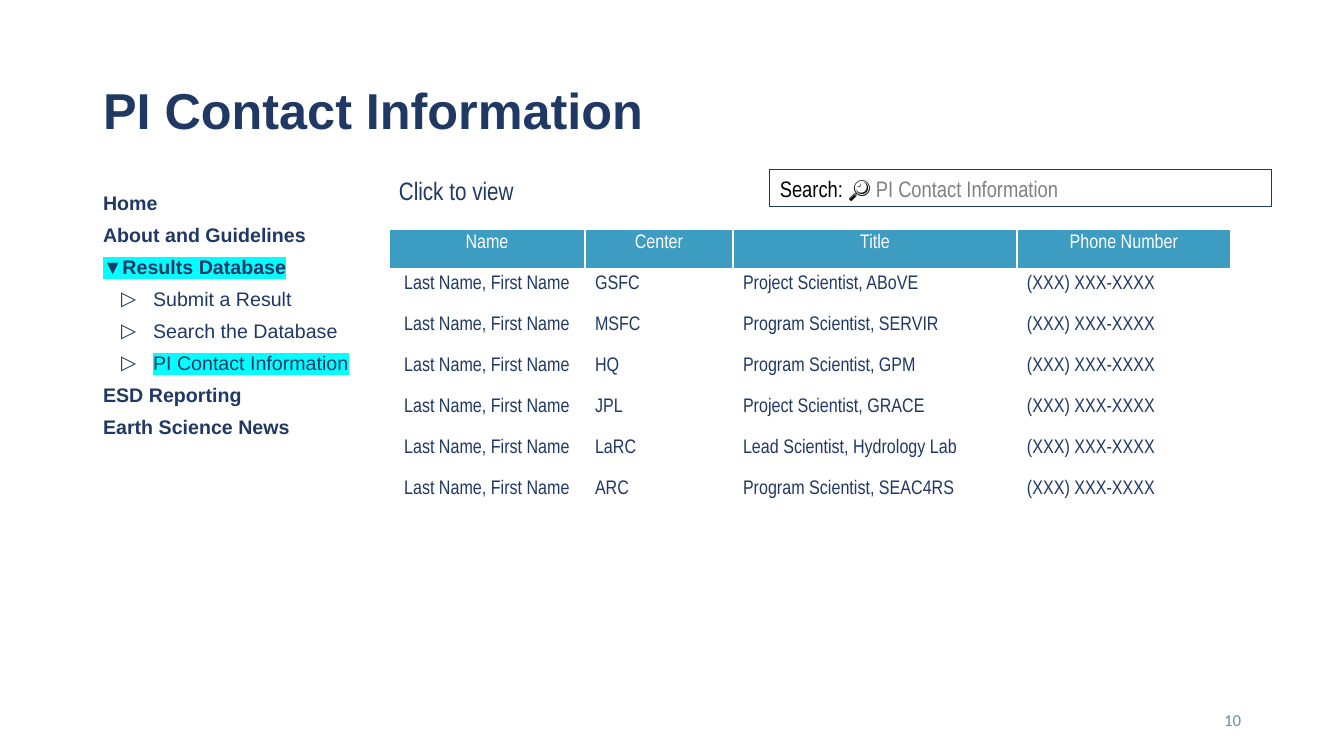
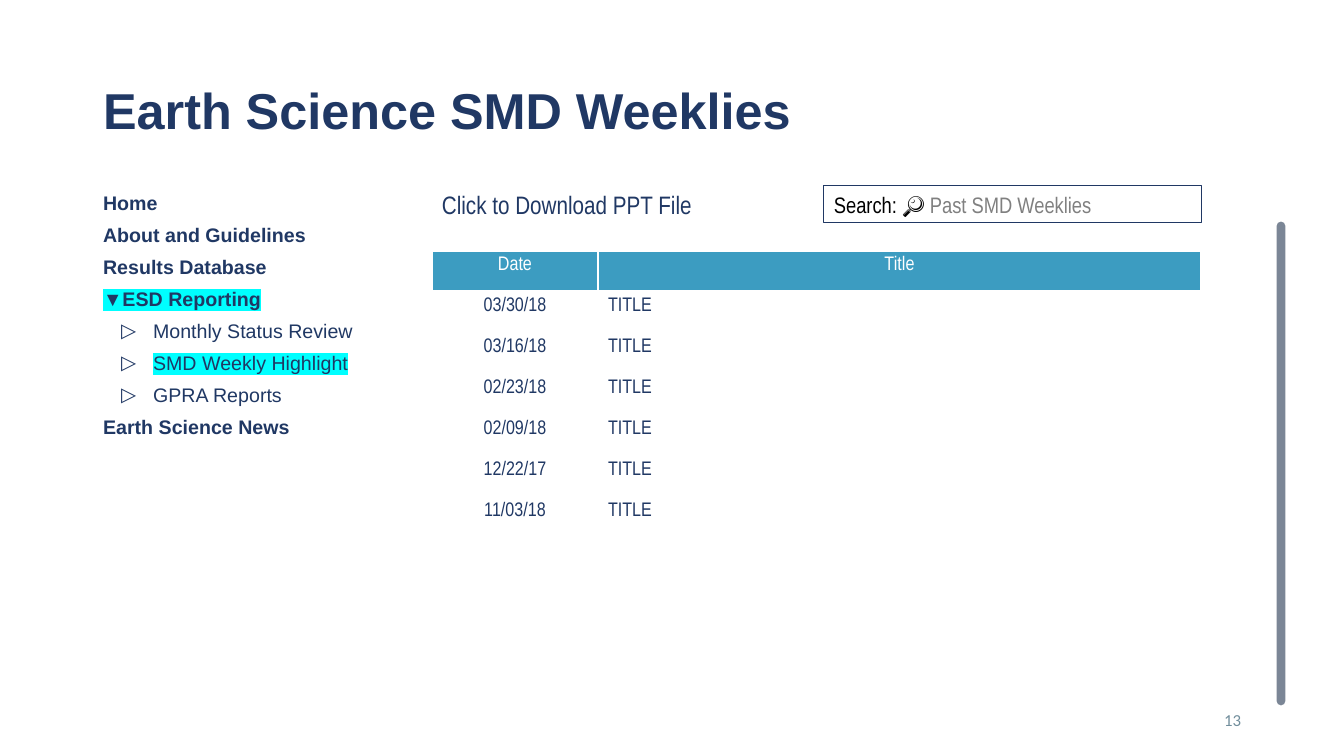
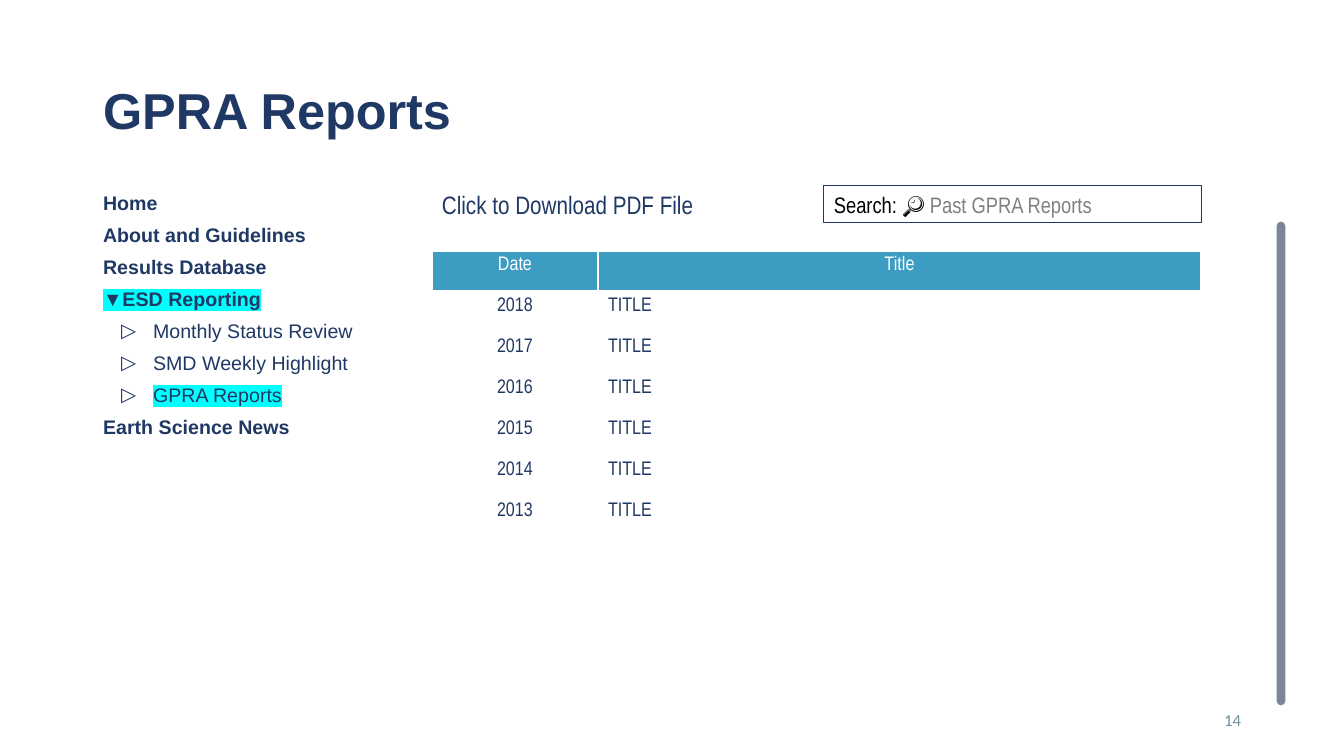
from lxml import etree
from pptx import Presentation
from pptx.dml.color import RGBColor
from pptx.enum.shapes import MSO_CONNECTOR, MSO_SHAPE
from pptx.enum.text import MSO_ANCHOR, MSO_AUTO_SIZE, PP_ALIGN
from pptx.oxml.ns import qn
from pptx.util import Emu, Pt

PX = 914400 / 100.8
COLORS = {
    "navy": "203864", "blue": "3C9CC1", "white": "FFFFFF", "black": "000000",
    "grey": "808080", "page": "718E9C", "slate": "44546A", "cyan": "00FFFF",
}
FORMATS = {
    "title": {"name": "Arial", "size": Pt(36), "bold": True},
    "section": {"name": "Arial", "size": Pt(14), "bold": True},
    "subsection": {"name": "Arial", "size": Pt(14), "bold": False},
    "table": {"name": "Arial Narrow", "size": Pt(14), "bold": False},
    "hint": {"name": "Arial Narrow", "size": Pt(18)},
    "search": {"name": "Arial Narrow", "size": Pt(16)},
    "page": {"name": "Calibri", "size": Pt(12)},
}
TITLE_BOX = (93, 40, 1159, 146)
MENU_BOX = (93, 186, 310, 259)
PAGE_BOX = (949, 700, 302, 40)
ROW_HEIGHT = 41
SCROLLBAR = (1281, 226, 1281, 701)
MENU = {
    "Home": [],
    "About and Guidelines": [],
    "Results Database": ["Submit a Result", "Search the Database", "PI Contact Information"],
    "ESD Reporting": ["Monthly Status Review", "SMD Weekly Highlight", "GPRA Reports"],
    "Earth Science News": [],
}
CONTACTS = {
    "hint_box": (389, 170, 140, 40), "search_box": (770, 170, 502, 37),
    "table_at": (389, 229), "columns": (196, 148, 284, 214), "scrollbar": False,
}
DOWNLOADS = {
    "hint_box": (432, 184, 343, 40), "search_box": (824, 186, 378, 37),
    "table_at": (432, 251), "columns": (166, 603), "scrollbar": True,
}
SCIENTISTS = [
    ("GSFC", "Project Scientist, ABoVE"), ("MSFC", "Program Scientist, SERVIR"),
    ("HQ", "Program Scientist, GPM"), ("JPL", "Project Scientist, GRACE"),
    ("LaRC", "Lead Scientist, Hydrology Lab"), ("ARC", "Program Scientist, SEAC4RS"),
]
WEEKLY_DATES = ["03/30/18", "03/16/18", "02/23/18", "02/09/18", "12/22/17", "11/03/18"]
PAGES = [
    {"title": "PI Contact Information", "number": "10", "layout": CONTACTS,
     "section": "Results Database", "current": "PI Contact Information",
     "hint": "Click to view", "query": "PI Contact Information",
     "rows": [("Name", "Center", "Title", "Phone Number")]
     + [("Last Name, First Name", center, role, "(XXX) XXX-XXXX") for center, role in SCIENTISTS]},
    {"title": "Earth Science SMD Weeklies", "number": "13", "layout": DOWNLOADS,
     "section": "ESD Reporting", "current": "SMD Weekly Highlight",
     "hint": "Click to Download PPT File", "query": "Past SMD Weeklies",
     "rows": [("Date", "Title")] + [(date, "TITLE") for date in WEEKLY_DATES]},
    {"title": "GPRA Reports", "number": "14", "layout": DOWNLOADS,
     "section": "ESD Reporting", "current": "GPRA Reports",
     "hint": "Click to Download PDF File", "query": "Past GPRA Reports",
     "rows": [("Date", "Title")] + [(str(year), "TITLE") for year in range(2018, 2012, -1)]},
]


def px(*lengths):
    return [Emu(round(length * PX)) for length in lengths]


def add_run(paragraph, text, style, color, highlight=False):
    run = paragraph.add_run()
    run.text = text
    for attribute, value in FORMATS[style].items():
        setattr(run.font, attribute, value)
    run.font.color.rgb = RGBColor.from_string(COLORS[color])
    if highlight:
        marker = etree.Element(qn("a:highlight"))
        etree.SubElement(marker, qn("a:srgbClr"), val=COLORS["cyan"])
        run.font._element.find(qn("a:solidFill")).addnext(marker)


deck = Presentation()
deck.slide_width, deck.slide_height = px(1344, 756)

for page in PAGES:
    layout = page["layout"]
    slide = deck.slides.add_slide(deck.slide_layouts[1])
    title, menu = slide.placeholders
    for placeholder, box, anchor in ((title, TITLE_BOX, MSO_ANCHOR.MIDDLE),
                                     (menu, MENU_BOX, MSO_ANCHOR.TOP)):
        placeholder.left, placeholder.top, placeholder.width, placeholder.height = px(*box)
        placeholder.text_frame.vertical_anchor = anchor
        placeholder.text_frame.auto_size = MSO_AUTO_SIZE.NONE

    heading = title.text_frame.paragraphs[0]
    heading.alignment = PP_ALIGN.LEFT
    heading.line_spacing = 0.9
    add_run(heading, page["title"], "title", "navy")

    # Navigation menu: only the open section lists its entries
    entries = []
    for section, children in MENU.items():
        is_open = section == page["section"]
        entries.append((0, "▼" + section if is_open else section, is_open))
        if is_open:
            entries += [(1, child, child == page["current"]) for child in children]
    for index, (level, label, highlighted) in enumerate(entries):
        frame = menu.text_frame
        entry = frame.add_paragraph() if index else frame.paragraphs[0]
        entry.level = level
        entry.space_before, entry.space_after = Pt(0), Pt(6)
        properties = entry._p.get_or_add_pPr()
        margin, indent = px(50, -32) if level else (0, 0)
        properties.set("marL", str(margin))
        properties.set("indent", str(indent))
        if level:
            etree.SubElement(properties, qn("a:buChar"), char="▷")
        else:
            etree.SubElement(properties, qn("a:buNone"))
        add_run(entry, label, "subsection" if level else "section", "navy", highlighted)

    number = slide.shapes.add_textbox(*px(*PAGE_BOX)).text_frame
    number.word_wrap = True
    number.vertical_anchor = MSO_ANCHOR.MIDDLE
    number.paragraphs[0].alignment = PP_ALIGN.RIGHT
    add_run(number.paragraphs[0], page["number"], "page", "page")

    hint = slide.shapes.add_textbox(*px(*layout["hint_box"])).text_frame
    hint.word_wrap = True
    add_run(hint.paragraphs[0], page["hint"], "hint", "navy")

    search = slide.shapes.add_shape(MSO_SHAPE.RECTANGLE, *px(*layout["search_box"]))
    search.shadow.inherit = False
    search.fill.background()
    search.line.color.rgb = RGBColor.from_string(COLORS["navy"])
    search.line.width = Pt(0.75)
    search.text_frame.vertical_anchor = MSO_ANCHOR.TOP
    prompt = search.text_frame.paragraphs[0]
    prompt.alignment = PP_ALIGN.LEFT
    add_run(prompt, "Search: 🔎 ", "search", "black")
    add_run(prompt, page["query"], "search", "grey")

    rows, columns = page["rows"], layout["columns"]
    table = slide.shapes.add_table(
        len(rows), len(columns), *px(*layout["table_at"], sum(columns), ROW_HEIGHT * len(rows))
    ).table
    table.first_row = table.horz_banding = False
    for column, width in zip(table.columns, px(*columns)):
        column.width = width
    for row_index, row in enumerate(rows):
        is_header = row_index == 0
        table.rows[row_index].height = px(ROW_HEIGHT)[0]
        for column_index, text in enumerate(row):
            cell = table.cell(row_index, column_index)
            borders = cell._tc.get_or_add_tcPr()
            for side in ("lnL", "lnR", "lnT", "lnB"):
                # A thick rule separates the header from the first row
                thick = (is_header and side == "lnB") or (row_index == 1 and side == "lnT")
                border = etree.SubElement(borders, qn("a:" + side), w=str(Pt(3 if thick else 1)))
                border_fill = etree.SubElement(border, qn("a:solidFill"))
                etree.SubElement(border_fill, qn("a:srgbClr"), val=COLORS["white"])
            if is_header:
                cell.fill.solid()
                cell.fill.fore_color.rgb = RGBColor.from_string(COLORS["blue"])
            else:
                cell.fill.background()
            paragraph = cell.text_frame.paragraphs[0]
            centred = is_header or column_index == 0
            paragraph.alignment = PP_ALIGN.CENTER if centred else PP_ALIGN.LEFT
            add_run(paragraph, text, "table", "white" if is_header else "navy")

    if layout["scrollbar"]:
        scrollbar = slide.shapes.add_connector(MSO_CONNECTOR.STRAIGHT, *px(*SCROLLBAR))
        scrollbar.line.width = Pt(6.25)
        scrollbar.line.color.rgb = RGBColor.from_string(COLORS["slate"])
        outline = scrollbar.line._ln
        outline.set("cap", "rnd")
        etree.SubElement(outline.find(".//" + qn("a:srgbClr")), qn("a:alpha"), val="69000")
        etree.SubElement(scrollbar._element.spPr, qn("a:effectLst"))

deck.save("out.pptx")
